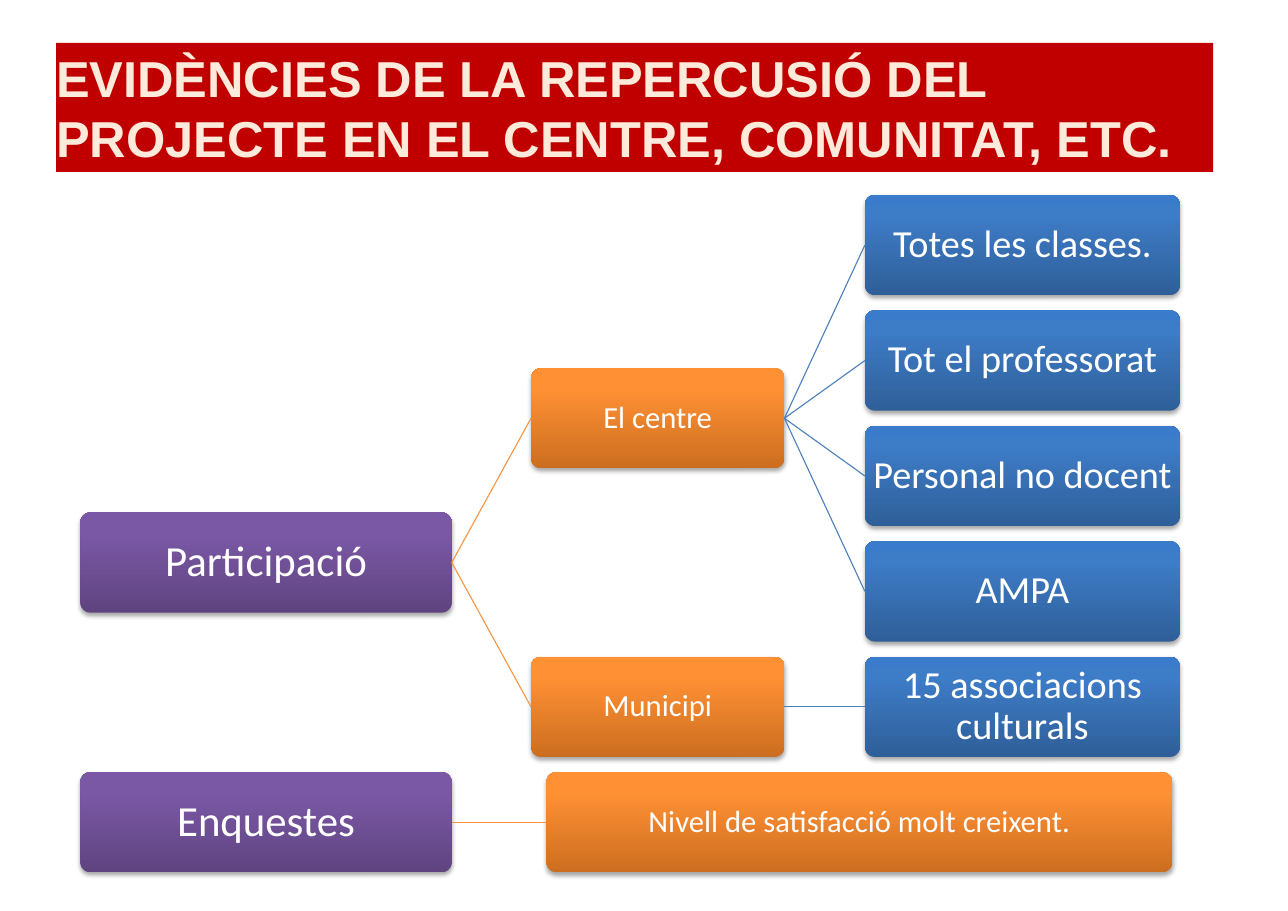
"""Build the slide on how the project reached the school and the community."""
from copy import deepcopy

from lxml import etree
from pptx import Presentation
from pptx.dml.color import RGBColor
from pptx.enum.shapes import MSO_CONNECTOR as CONNECTOR, MSO_SHAPE as SHAPE
from pptx.enum.text import MSO_ANCHOR as ANCHOR, PP_ALIGN as ALIGN
from pptx.oxml import parse_xml
from pptx.oxml.ns import nsdecls, qn
from pptx.util import Inches, Pt

COLORS = {
    "title_fill": "C00000",
    "title_text": "FDEADA",
    "box_text": "FFFFFF",
    "orange_line": "F79646",
    "blue_line": "4F81BD",
}
GRADIENTS = {
    "purple": ("5F4480", "7B58A6", "7C57A8"),
    "orange": ("CC6E20", "FF9034", "FF9136"),
    "blue": ("2F5F99", "3D7CC7", "3A7CCB"),
}
SHADOW = (
    f'<a:outerShdw {nsdecls("a")} blurRad="40000" dist="23000" dir="5400000" rotWithShape="0">'
    '<a:srgbClr val="000000"><a:alpha val="35000"/></a:srgbClr></a:outerShdw>'
)
FIRST_ROW = 1.77
LAST_ROW = 7.01
ROW_PITCH = (LAST_ROW - FIRST_ROW) / 5
BOX_HEIGHT = 0.91


def write_text(shape, text, font="Calibri", size=20, color="box_text", bold=False,
               align=ALIGN.CENTER, margin=0.02, spacing=0.9):
    """Write one formatted paragraph into a shape."""
    frame = shape.text_frame
    frame.word_wrap = True
    frame.vertical_anchor = ANCHOR.MIDDLE
    frame.margin_left = frame.margin_right = Inches(margin)
    frame.margin_top = frame.margin_bottom = Inches(margin)
    frame.text = text
    paragraph = frame.paragraphs[0]
    paragraph.alignment = align
    paragraph.line_spacing = spacing
    paragraph.space_before = Pt(0)
    run_font = paragraph.runs[0].font
    run_font.name = font
    run_font.size = Pt(size)
    run_font.bold = bold
    run_font.color.rgb = RGBColor.from_string(COLORS[color])


def fill_gradient(shape, colors):
    """Fill a shape with a three-stop gradient, darkest at the bottom."""
    shape.fill.gradient()
    shape.fill.gradient_angle = 90
    last_stop = shape._element.spPr.find(".//" + qn("a:gs") + "[2]")
    last_stop.addnext(deepcopy(last_stop))
    for stop, color, position in zip(shape.fill.gradient_stops, colors, (0, 0.8, 1)):
        stop.color.rgb = RGBColor.from_string(color)
        stop.position = position


presentation = Presentation()
presentation.slide_width = Inches(11.69)
presentation.slide_height = Inches(8.27)
slide = presentation.slides.add_slide(presentation.slide_layouts[5])

title = slide.shapes.title
title.left, title.top = Inches(0.51), Inches(0.39)
title.width, title.height = Inches(10.5), Inches(1.17)
title.fill.solid()
title.fill.fore_color.rgb = RGBColor.from_string(COLORS["title_fill"])
write_text(title, "EVIDÈNCIES DE LA REPERCUSIÓ DEL PROJECTE EN EL CENTRE, COMUNITAT, ETC.",
           font="Arial", size=33, color="title_text", bold=True, align=ALIGN.LEFT,
           margin=0, spacing=1.0)

levels = {
    "topic": (0.73, 3.37, "purple", 28),
    "scope": (4.82, 2.3, "orange", 20),
    "result": (4.96, 5.68, "orange", 20),
    "group": (7.85, 2.86, "blue", 25),
}
nodes = [
    ("Participació", "topic", 2.75, None),
    ("El centre", "scope", 1.5, "Participació"),
    ("Totes les classes.", "group", 0, "El centre"),
    ("Tot el professorat", "group", 1, "El centre"),
    ("Personal no docent", "group", 2, "El centre"),
    ("AMPA", "group", 3, "El centre"),
    ("Municipi", "scope", 4, "Participació"),
    ("15 associacions culturals", "group", 4, "Municipi"),
    ("Enquestes", "topic", 5, None),
    ("Nivell de satisfacció molt creixent.", "result", 5, "Enquestes"),
]

boxes = {}
for text, level, row, parent in nodes:
    left, width, hue, size = levels[level]
    box = slide.shapes.add_shape(
        SHAPE.ROUNDED_RECTANGLE, Inches(left), Inches(FIRST_ROW + row * ROW_PITCH),
        Inches(width), Inches(BOX_HEIGHT))
    box.adjustments[0] = 0.1
    box.line.fill.background()
    fill_gradient(box, GRADIENTS[hue])
    box.shadow.inherit = False
    box._element.spPr.find(qn("a:effectLst")).append(parse_xml(SHADOW))
    write_text(box, text, size=size)
    boxes[text] = box
    if parent:
        link = slide.shapes.add_connector(CONNECTOR.STRAIGHT, 0, 0, 0, 0)
        link.begin_connect(boxes[parent], 3)
        link.end_connect(box, 1)
        link.line.width = Pt(0.75)
        link.line.color.rgb = RGBColor.from_string(COLORS[f"{hue}_line"])
        etree.SubElement(link._element.spPr, qn("a:effectLst"))

presentation.save("out.pptx")
